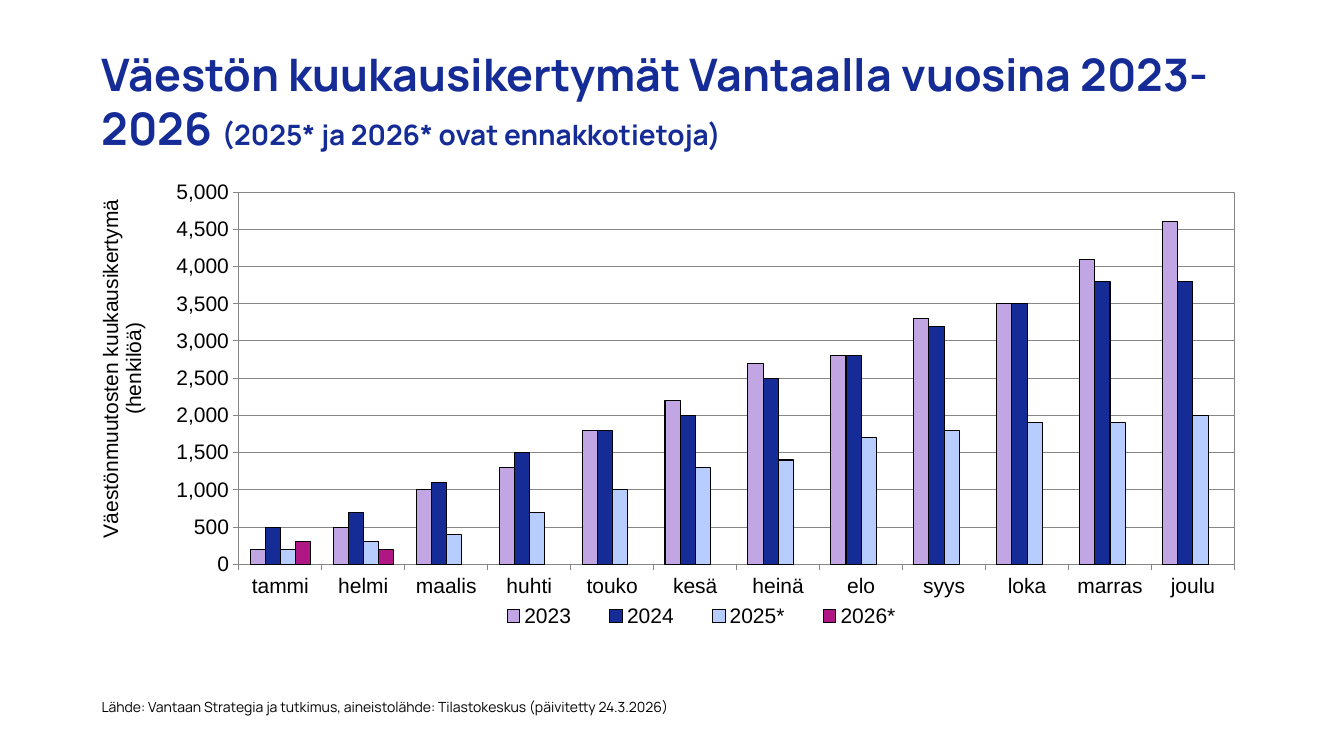
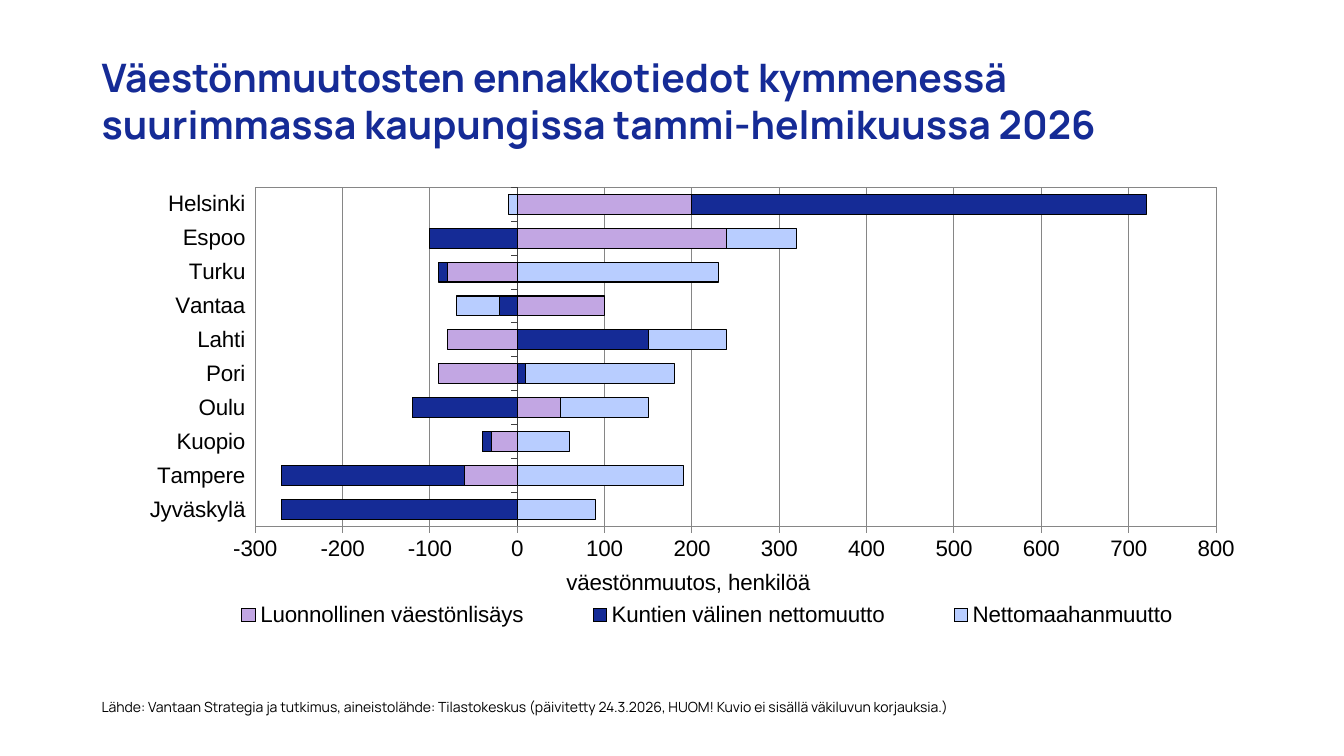
from lxml.etree import SubElement
from pptx import Presentation
from pptx.chart.data import CategoryChartData
from pptx.dml.color import RGBColor
from pptx.enum.chart import XL_CHART_TYPE, XL_LEGEND_POSITION, XL_TICK_LABEL_POSITION, XL_TICK_MARK
from pptx.enum.text import MSO_ANCHOR, MSO_AUTO_SIZE, PP_ALIGN
from pptx.oxml import parse_xml
from pptx.oxml.ns import nsdecls, qn
from pptx.util import Cm, Pt

BLUE = RGBColor(0x15, 0x2B, 0x96)
LILAC = RGBColor(0xC2, 0xA6, 0xE3)
PALE = RGBColor(0xB8, 0xCD, 0xFF)
MAGENTA = RGBColor(0xB0, 0x17, 0x85)
GREY = RGBColor(0x86, 0x86, 0x86)
DARK = RGBColor(0x40, 0x40, 0x40)
BLACK = RGBColor(0, 0, 0)
SERIES_COLORS = [LILAC, BLUE, PALE, MAGENTA]

TITLE_BOX = Cm(2.31), Cm(0.97), Cm(28.5), Cm(3.12)
SOURCE_BOX = Cm(2.31), Cm(17.48), Cm(24.36), Cm(0.76)
TITLE_FONT = {"name": "Manrope", "bold": True}
SOURCE_FONT = {"name": "Manrope", "size": Pt(10)}
SOURCE = "Lähde: Vantaan Strategia ja tutkimus, aineistolähde: Tilastokeskus (päivitetty 24.3.2026"

MONTHLY = {
    "title": [("Väestön kuukausikertymät Vantaalla vuosina 2023-2026 ", 32),
              ("(2025* ja 2026* ovat ennakkotietoja)", 20)],
    "source": SOURCE + ")",
    "box": (Cm(2.34), Cm(4.47), Cm(29.21), Cm(11.58)),
    "type": XL_CHART_TYPE.COLUMN_CLUSTERED,
    "size": 15,
    "cats": ["tammi", "helmi", "maalis", "huhti", "touko", "kesä",
             "heinä", "elo", "syys", "loka", "marras", "joulu"],
    "series": {
        "2023": [200, 500, 1000, 1300, 1800, 2200, 2700, 2800, 3300, 3500, 4100, 4600],
        "2024": [500, 700, 1100, 1500, 1800, 2000, 2500, 2800, 3200, 3500, 3800, 3800],
        "2025*": [200, 300, 400, 700, 1000, 1300, 1400, 1700, 1800, 1900, 1900, 2000],
        "2026*": [300, 200] + [None] * 10,
    },
    "plot": {"gap_width": 150, "overlap": 0},
    "scale": {"minimum_scale": 0, "maximum_scale": 5000, "major_unit": 500},
    "format": "#,##0",
    "labels": XL_TICK_LABEL_POSITION.NEXT_TO_AXIS,
    "axis_color": GREY,
    "axis_title": "Väestönmuutosten kuukausikertymä (henkilöä)",
    "plot_area": (0.126, 0.032, 0.859, 0.81),
    "title_at": (0, 0.04),
    "legend_area": (0.33, 0.92, 0.39, 0.07),
}

CITIES = {
    "title": [("Väestönmuutosten ennakkotiedot kymmenessä suurimmassa kaupungissa "
               "tammi-helmikuussa 2026", 28)],
    "source": SOURCE + ", HUOM! Kuvio ei sisällä väkiluvun korjauksia.)",
    "box": (Cm(2.49), Cm(4.37), Cm(29.21), Cm(11.58)),
    "type": XL_CHART_TYPE.BAR_STACKED,
    "size": 16,
    "cats": ["Jyväskylä", "Tampere", "Kuopio", "Oulu", "Pori",
             "Lahti", "Vantaa", "Turku", "Espoo", "Helsinki"],
    "series": {
        "Luonnollinen väestönlisäys": [0, -60, -30, 50, -90, -80, 100, -80, 240, 200],
        "Kuntien välinen nettomuutto": [-270, -210, -10, -120, 10, 150, -20, -10, -100, 520],
        "Nettomaahanmuutto": [90, 190, 60, 100, 170, 90, -50, 230, 80, -10],
    },
    "plot": {"gap_width": 70, "overlap": 100},
    "scale": {"minimum_scale": -300, "maximum_scale": 800, "major_unit": 100},
    "format": "0",
    "labels": XL_TICK_LABEL_POSITION.LOW,
    "axis_color": DARK,
    "axis_title": "väestönmuutos, henkilöä",
    "plot_area": (0.135, 0.03, 0.829, 0.739),
    "title_at": (0.4, 0.85),
    "legend_area": (0.07, 0.93, 0.91, 0.07),
}


def set_attrs(obj, values):
    for name, value in values.items():
        setattr(obj, name, value)


def set_line(line, color):
    line.color.rgb = color
    line.width = Pt(0.75)


def make_layout(area, inner=False):
    layout = parse_xml(f"<c:layout {nsdecls('c')}><c:manualLayout/></c:layout>")
    manual = layout[0]
    values = [("layoutTarget", "inner")] if inner else []
    values += [("xMode", "edge"), ("yMode", "edge"), *zip("xywh", area)]
    for tag, value in values:
        SubElement(manual, qn(f"c:{tag}")).set("val", str(value))
    return layout


def place_layout(parent, index, area, inner=False):
    for old in parent.findall(qn("c:layout")):
        parent.remove(old)
    parent.insert(index, make_layout(area, inner))


def add_title(slide, box, parts):
    sp = slide.shapes.title
    sp.left, sp.top, sp.width, sp.height = box
    tf = sp.text_frame
    set_attrs(tf, {"word_wrap": True, "auto_size": MSO_AUTO_SIZE.NONE,
                   "vertical_anchor": MSO_ANCHOR.MIDDLE})
    p = tf.paragraphs[0]
    set_attrs(p, {"alignment": PP_ALIGN.LEFT, "line_spacing": 1.0})
    for text, size in parts:
        r = p.add_run()
        r.text = text
        set_attrs(r.font, {**TITLE_FONT, "size": Pt(size)})
        r.font.color.rgb = BLUE


def add_source(slide, box, text):
    tf = slide.shapes.add_textbox(*box).text_frame
    tf.word_wrap = True
    r = tf.paragraphs[0].add_run()
    r.text = text
    set_attrs(r.font, SOURCE_FONT)
    r.font.color.rgb = BLACK


def format_axes(chart, data):
    cat, val = chart.category_axis, chart.value_axis
    for axis, color in ((cat, data["axis_color"]), (val, GREY)):
        set_attrs(axis, {"major_tick_mark": XL_TICK_MARK.OUTSIDE,
                         "minor_tick_mark": XL_TICK_MARK.NONE})
        set_line(axis.format.line, color)
    cat.tick_label_position = data["labels"]
    cat.has_major_gridlines = False
    set_attrs(val, {**data["scale"], "has_major_gridlines": True})
    set_attrs(val.tick_labels, {"number_format": data["format"],
                                "number_format_is_linked": False})
    set_line(val.major_gridlines.format.line, GREY)

    title = val.axis_title
    title.text_frame.text = data["axis_title"]
    font = title.text_frame.paragraphs[0].runs[0].font
    set_attrs(font, {"name": "Arial", "size": Pt(data["size"]), "bold": False})
    font.color.rgb = BLACK
    place_layout(title._element, 1, data["title_at"])


def add_bar_chart(slide, box, data):
    cd = CategoryChartData()
    cd.categories = data["cats"]
    for name, values in data["series"].items():
        cd.add_series(name, values)
    chart = slide.shapes.add_chart(data["type"], *box, cd).chart
    set_attrs(chart, {"has_title": False, "has_legend": True})
    set_attrs(chart.font, {"name": "Arial", "size": Pt(data["size"])})
    chart.font.color.rgb = BLACK

    plot = chart.plots[0]
    set_attrs(plot, {**data["plot"], "vary_by_categories": False})
    for series, color in zip(plot.series, SERIES_COLORS):
        series.invert_if_negative = False
        series.format.fill.solid()
        series.format.fill.fore_color.rgb = color
        set_line(series.format.line, BLACK)

    format_axes(chart, data)
    set_attrs(chart.legend, {"position": XL_LEGEND_POSITION.BOTTOM,
                             "include_in_layout": False})
    place_layout(chart.legend._element, 1, data["legend_area"])

    area = chart._chartSpace.chart.plotArea
    place_layout(area, 0, data["plot_area"], inner=True)
    area.append(parse_xml(
        f"<c:spPr {nsdecls('c', 'a')}><a:noFill/><a:ln w=\"{Pt(0.75)}\"><a:solidFill>"
        f"<a:srgbClr val=\"{GREY}\"/></a:solidFill></a:ln></c:spPr>"))


def add_chart_slide(prs, data):
    slide = prs.slides.add_slide(prs.slide_layouts[5])
    add_title(slide, TITLE_BOX, data["title"])
    add_source(slide, SOURCE_BOX, data["source"])
    add_bar_chart(slide, data["box"], data)


def main():
    prs = Presentation()
    prs.slide_width, prs.slide_height = Cm(33.87), Cm(19.05)
    for data in (MONTHLY, CITIES):
        add_chart_slide(prs, data)
    prs.save("out.pptx")


if __name__ == "__main__":
    main()
